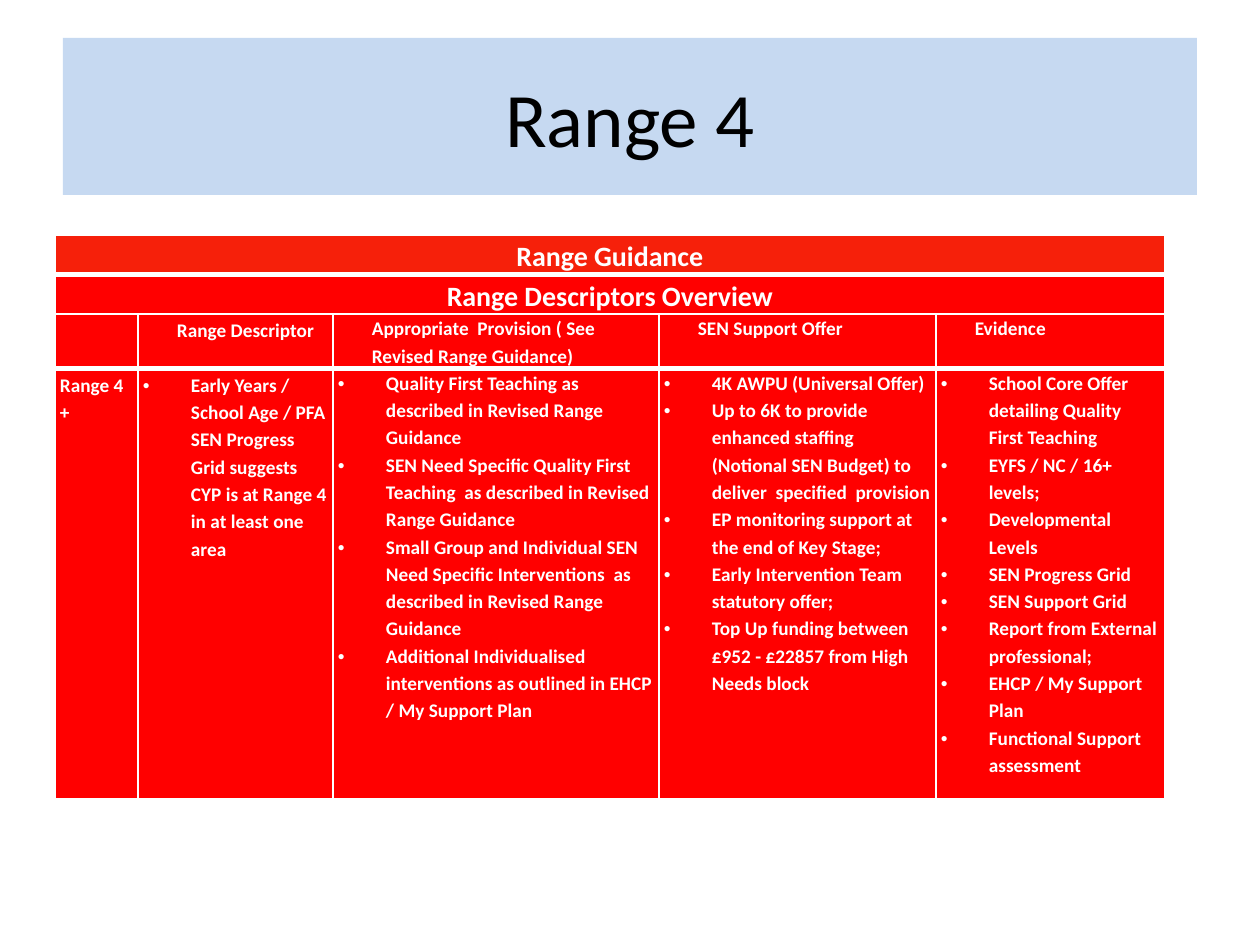
from lxml import etree
from pptx import Presentation
from pptx.dml.color import RGBColor
from pptx.enum import shapes, text
from pptx.oxml.ns import qn
from pptx.util import Pt

PX = 914400 / 126
COLORS = {"title": "C6D9F1", "banner": "F6200A", "red": "FF0000", "white": "FFFFFF", "black": "000000"}


def px(n):
    return round(n * PX)


def write(tf, lines, size=11, color="white", bold=True, align=None, spacing=1.15,
          after=None, left=0, bullet=False):
    for i, line in enumerate(lines):
        p = tf.paragraphs[0] if i == 0 else tf.add_paragraph()
        p.alignment = align
        p.line_spacing = spacing
        if after:
            p.space_after = Pt(after)
        pPr = p._p.get_or_add_pPr()
        pPr.set("marL", str(px(left)))
        pPr.set("indent", str(px(-left if bullet else 0)))
        if bullet:
            etree.SubElement(pPr, qn("a:buFont"), typeface="Arial")
            etree.SubElement(pPr, qn("a:buChar"), char="•")
        r = p.add_run()
        r.text = line
        r.font.name = "Calibri"
        r.font.size = Pt(size)
        r.font.bold = bold
        r.font.color.rgb = RGBColor.from_string(COLORS[color])


prs = Presentation()
prs.slide_width, prs.slide_height = px(1260), px(945)
s = prs.slides.add_slide(prs.slide_layouts[6])

sp = s.shapes.add_shape(shapes.MSO_SHAPE.RECTANGLE, px(63), px(38), px(1134), px(157))
sp.shadow.inherit = False
sp.fill.solid()
sp.fill.fore_color.rgb = RGBColor.from_string(COLORS["title"])
sp.line.fill.background()
sp.text_frame.vertical_anchor = text.MSO_ANCHOR.MIDDLE
write(sp.text_frame, ["Range 4"], size=44, color="black", bold=False,
      align=text.PP_ALIGN.CENTER, spacing=1.0)

widths = [83, 195, 326, 277, 229]
heights = [37, 37, 53, 430]
table = s.shapes.add_table(4, 5, px(55), px(235), px(sum(widths)), px(sum(heights))).table
for column, width in zip(table.columns, widths):
    column.width = px(width)
for row, height in zip(table.rows, heights):
    row.height = px(height)

thick_edges = [(0, "lnB"), (1, "lnT"), (2, "lnB"), (3, "lnT")]
for i, row in enumerate(table.rows):
    for j, cell in enumerate(row.cells):
        cell.margin_left = cell.margin_right = px(5)
        cell.margin_top = cell.margin_bottom = px(2 if (i, j) in [(2, 1), (3, 0), (3, 1)] else 0)
        tcPr = cell._tc.get_or_add_tcPr()
        for edge in ("lnL", "lnR", "lnT", "lnB"):
            ln = etree.SubElement(tcPr, qn(f"a:{edge}"), w=str(Pt(3 if (i, edge) in thick_edges else 1)))
            line_fill = etree.SubElement(ln, qn("a:solidFill"))
            etree.SubElement(line_fill, qn("a:srgbClr"), val=COLORS["white"])
        cell.fill.solid()
        cell.fill.fore_color.rgb = RGBColor.from_string(COLORS["banner" if i == 0 else "red"])

for i, heading in enumerate(["Range Guidance", "Range Descriptors Overview"]):
    table.cell(i, 0).merge(table.cell(i, 4))
    write(table.cell(i, 0).text_frame, [heading], size=16, align=text.PP_ALIGN.CENTER)

columns = [
    ("Range Descriptor", [
        "Early Years / School Age / PFA SEN Progress Grid suggests CYP is at Range 4 in at least one area",
    ]),
    ("Appropriate  Provision ( See Revised Range Guidance)", [
        "Quality First Teaching as described in Revised Range Guidance",
        "SEN Need Specific Quality First Teaching  as described in Revised Range Guidance",
        "Small Group and Individual SEN Need Specific Interventions  as described in Revised Range Guidance",
        "Additional Individualised interventions as outlined in EHCP / My Support Plan",
    ]),
    ("SEN Support Offer", [
        "4K AWPU (Universal Offer)",
        "Up to 6K to provide enhanced staffing (Notional SEN Budget) to deliver  specified  provision",
        "EP monitoring support at the end of Key Stage;",
        "Early Intervention Team statutory offer;",
        "Top Up funding between £952 - £22857 from High Needs block",
    ]),
    ("Evidence", [
        "School Core Offer detailing Quality First Teaching",
        "EYFS / NC / 16+ levels;",
        "Developmental Levels",
        "SEN Progress Grid",
        "SEN Support Grid",
        "Report from External professional;",
        "EHCP / My Support Plan",
        "Functional Support assessment",
    ]),
]
write(table.cell(3, 0).text_frame, ["Range 4 +"], after=10)
for j, (heading, items) in enumerate(columns, 1):
    write(table.cell(2, j).text_frame, [heading], left=34)
    write(table.cell(3, j).text_frame, items, left=48, bullet=True)

prs.save("out.pptx")
